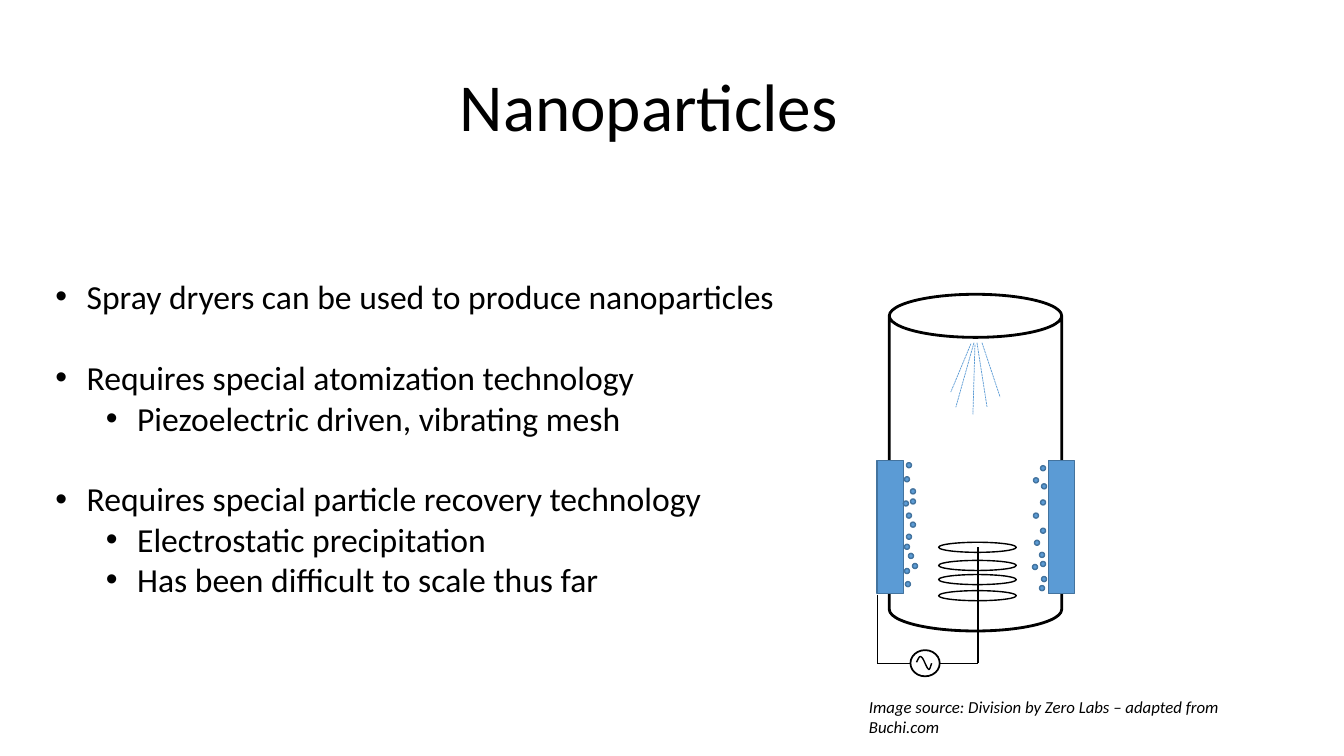
from dataclasses import dataclass

from lxml.etree import SubElement as Sub
from pptx import Presentation
from pptx.dml.color import RGBColor as RGB
from pptx.enum.dml import MSO_LINE as Dash
from pptx.enum.shapes import MSO_CONNECTOR as Conn, MSO_SHAPE as Kind
from pptx.enum.text import MSO_ANCHOR as Anchor, MSO_AUTO_SIZE as Auto, PP_ALIGN as Align
from pptx.oxml.ns import qn
from pptx.util import Inches, Pt


@dataclass(frozen=True)
class Theme:
    font: str = "Calibri"
    ink: RGB = RGB.from_string("000000")
    blue: RGB = RGB.from_string("5B9BD5")
    edge: RGB = RGB.from_string("43739E")
    title: int = 48
    body: int = 24
    note: int = 12


T = Theme()
WIDE, HIGH = 13.33, 7.5
INDENT = 0.31

# Text, level, starts a new block
POINTS = [
    ("Spray dryers can be used to produce nanoparticles", 0, False),
    ("Requires special atomization technology", 0, True),
    ("Piezoelectric driven, vibrating mesh", 1, False),
    ("Requires special particle recovery technology", 0, True),
    ("Electrostatic precipitation", 1, False),
    ("Has been difficult to scale thus far", 1, False),
]

# Dryer parts in cells of a 196 x 379 grid
COLS = 196
COILS = [246, 264, 278, 294]
WIRES = [(33, 366, 0, 366), (0, 298, 0, 366), (100, 366, 61, 366), (100, 251, 100, 366)]
SPRAY = [(97, 50, 95, 119), (93, 49, 73, 97), (99, 48, 109, 112),
         (104, 48, 122, 102), (96, 48, 78, 112)]
WAVE = [(39, 365), (41, 361), (42, 358), (44, 360), (46, 361),
        (49, 371), (51, 372), (52, 373), (53, 369), (54, 366)]
DOTS = [
    # left wall
    (29, 167), (27, 181), (33, 193), (33, 203), (26, 205), (29, 217), (33, 226),
    (29, 238), (27, 248), (31, 257), (35, 267), (27, 272), (28, 285),
    # right wall
    (162, 170), (155, 182), (163, 188), (162, 204), (155, 217), (162, 232), (156, 244),
    (161, 256), (162, 265), (154, 268), (163, 280), (161, 289),
]


def put(obj, vals):
    for name, val in vals.items():
        setattr(obj, name, val)


def place(shape, box):
    put(shape, dict(zip(("left", "top", "width", "height"), map(Inches, box))))


def write(para, text, size, **more):
    run = para.add_run()
    run.text = text
    put(run.font, {"name": T.font, "size": Pt(size), **more})
    run.font.color.rgb = T.ink


def bezier(pts, steps=8):
    """Points along a chain of cubic curves."""
    for i in range(0, len(pts) - 1, 3):
        for k in range(1, steps + 1):
            t = k / steps
            mix = ((1 - t) ** 3, 3 * t * (1 - t) ** 2, 3 * t * t * (1 - t), t ** 3)
            yield tuple(sum(m * p[a] for m, p in zip(mix, pts[i:i + 4])) for a in (0, 1))


def heading(slide, box):
    shape = slide.shapes.title
    place(shape, box)
    frame = shape.text_frame
    put(frame, {"vertical_anchor": Anchor.MIDDLE, "auto_size": Auto.NONE, "word_wrap": True})
    para = frame.paragraphs[0]
    write(para, "Nanoparticles", T.title)
    put(para, {"alignment": Align.CENTER, "line_spacing": 0.9})


def bullets(slide, box):
    shape = slide.placeholders[1]
    place(shape, box)
    frame = shape.text_frame
    put(frame, {"vertical_anchor": Anchor.TOP, "auto_size": Auto.NONE, "word_wrap": True})
    for i, (text, level, block) in enumerate(POINTS):
        para = frame.add_paragraph() if i else frame.paragraphs[0]
        props = para._p.get_or_add_pPr()
        props.set("marL", str(Inches(INDENT + level / 2)))
        props.set("indent", str(Inches(-INDENT)))
        Sub(props, qn("a:buFont"), typeface="Arial")
        Sub(props, qn("a:buChar"), char="•")
        put(para, {"level": level, "alignment": Align.LEFT, "line_spacing": 1.0,
                   "space_before": Pt(29 if block else 0), "space_after": Pt(0)})
        write(para, text, T.body)


def credit(slide, box):
    frame = slide.shapes.add_textbox(*map(Inches, box)).text_frame
    frame.word_wrap = True
    write(frame.paragraphs[0], "Image source: Division by Zero Labs – adapted from Buchi.com",
          T.note, italic=True)


def dryer(slide, box):
    x, y, w, _ = box
    cell = w / COLS

    def spot(c, r):
        return Inches(x + c * cell), Inches(y + r * cell)

    def style(shape, fill, color, width):
        shape.shadow.inherit = False
        if fill:
            shape.fill.solid()
            shape.fill.fore_color.rgb = fill
        else:
            shape.fill.background()
        shape.line.color.rgb = color
        shape.line.width = Pt(width)

    def part(home, kind, c, r, cols, rows, width=1, fill=None, color=T.ink):
        size = Inches(cols * cell), Inches(rows * cell)
        style(home.add_shape(kind, *spot(c, r), *size), fill, color, width)

    def line(home, ends, color, width, dash=None):
        wire = home.add_connector(Conn.STRAIGHT, *spot(*ends[:2]), *spot(*ends[2:]))
        wire.line.color.rgb = color
        put(wire.line, {"width": Pt(width), "dash_style": dash})
        Sub(wire._element.spPr, qn("a:effectLst"))

    blue = {"fill": T.blue, "color": T.edge}
    base = slide.shapes

    # Vessel, wall plates and coil
    part(base, Kind.CAN, 12, 0, 171, 334, 2)
    for c in (0, 170):
        part(base, Kind.RECTANGLE, c, 165, 26, 132, **blue)
    for r in COILS:
        part(base, Kind.OVAL, 61, r, 77, 10)

    # Power source with its wave and wires
    power = base.add_group_shape().shapes
    part(power, Kind.FLOWCHART_CONNECTOR, 33, 353, 29, 26, 1.25)
    pen = power.build_freeform(*spot(*WAVE[0]))
    pen.add_line_segments([spot(*p) for p in bezier(WAVE)], close=False)
    style(pen.convert_to_shape(), None, T.ink, 1)
    for ends in WIRES:
        line(base, ends, T.ink, 0.75)

    # Spray and particles
    spray = base.add_group_shape().shapes
    for ends in SPRAY:
        line(spray, ends, T.blue, 0.5, Dash.SQUARE_DOT)
    for c, r in DOTS:
        part(base, Kind.FLOWCHART_CONNECTOR, c, r, 5, 5, **blue)


def main():
    deck = Presentation()
    put(deck, {"slide_width": Inches(WIDE), "slide_height": Inches(HIGH)})
    slide = deck.slides.add_slide(deck.slide_layouts[1])
    heading(slide, (0.69, 0.36, 11.49, 1.45))
    bullets(slide, (0.45, 2.69, 7.6, 3.57))
    dryer(slide, (8.7, 2.92, 1.96, 3.79))
    credit(slide, (8.52, 6.86, 4.02, 0.5))
    deck.save("out.pptx")


if __name__ == "__main__":
    main()
